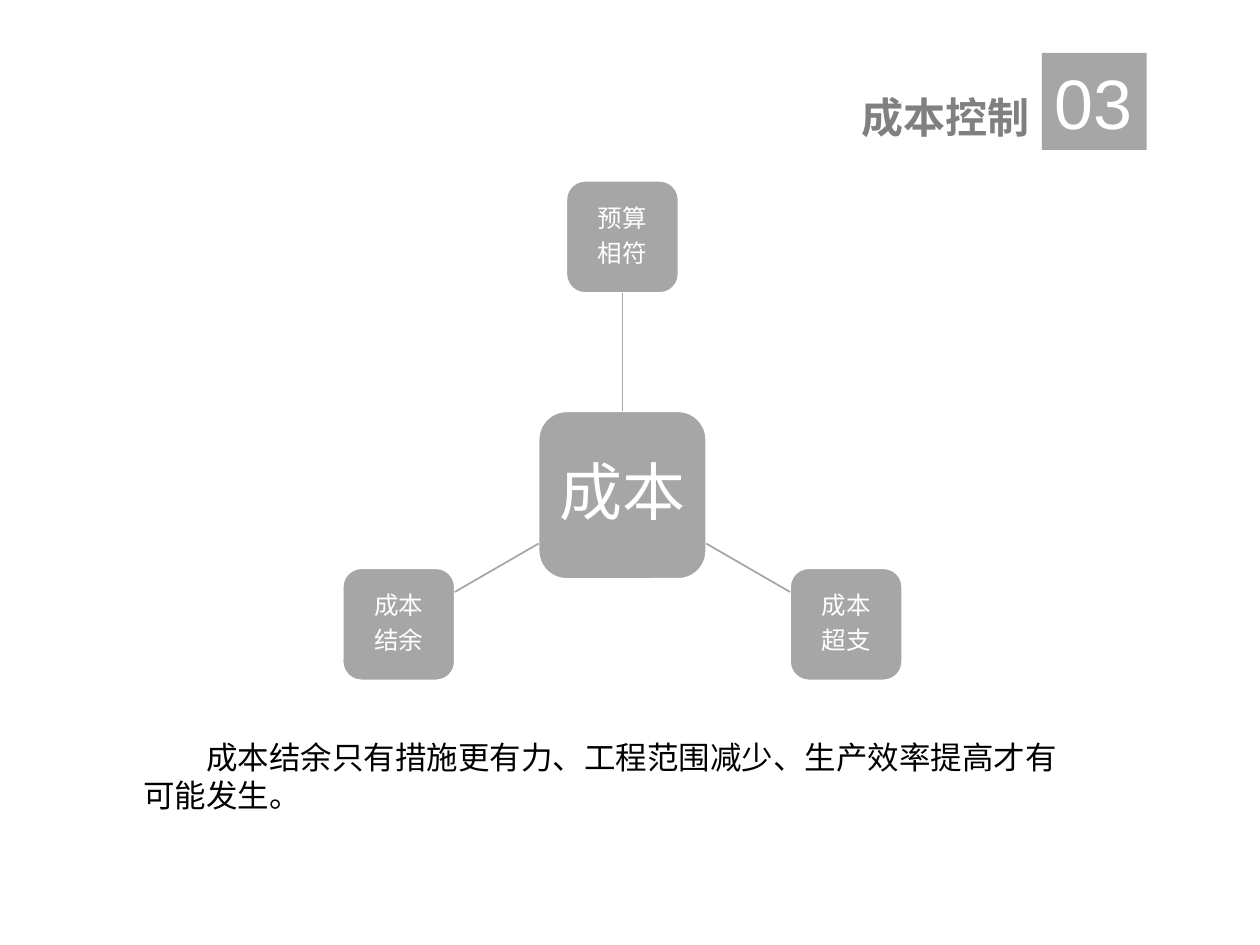
from math import cos, radians, sin

from lxml.etree import SubElement
from pptx import Presentation
from pptx.dml.color import RGBColor
from pptx.enum.shapes import MSO_CONNECTOR, MSO_SHAPE
from pptx.enum.text import MSO_ANCHOR as ANCHOR, MSO_AUTO_SIZE as AUTO, PP_ALIGN as ALIGN
from pptx.oxml.ns import qn
from pptx.util import Inches, Pt

GREY, WHITE = "A6A6A6", "FFFFFF"


def rgb(value):
    return RGBColor.from_string(value)


def write(sp, text, size, color=WHITE, font="Arial", bold=False, align=ALIGN.LEFT,
          anchor=ANCHOR.TOP, inset=None, wrap=True, spacing=None, after=None, indent=0):
    tf = sp.text_frame
    tf.auto_size = AUTO.NONE
    tf.word_wrap = wrap
    tf.vertical_anchor = anchor
    if inset is not None:
        tf.margin_left = tf.margin_right = tf.margin_top = tf.margin_bottom = Inches(inset)
    for i, line in enumerate(text.split("\n")):
        p = tf.paragraphs[0] if i == 0 else tf.add_paragraph()
        p.alignment = align
        if spacing:
            p.line_spacing = spacing
        if after is not None:
            p.space_after = Pt(after)
        if indent:
            p._p.get_or_add_pPr().set("indent", str(Inches(indent)))
        r = p.add_run()
        r.text = line
        r.font.size = Pt(size)
        r.font.bold = bold
        r.font.color.rgb = rgb(color)
        r.font.name = font
        SubElement(r._r.get_or_add_rPr(), qn("a:ea")).set("typeface", font)


prs = Presentation()
prs.slide_width, prs.slide_height = Inches(10), Inches(7.5)
s = prs.slides.add_slide(prs.slide_layouts[5])

# Title
title = s.shapes.title
title.left, title.top = Inches(4.32), Inches(0.68)
title.width, title.height = Inches(3.95), Inches(0.5)
write(title, "成本控制", 24, color="808080", font="Noto Sans CJK SC", bold=True, align=ALIGN.RIGHT)

# Section number
number = s.shapes.add_shape(MSO_SHAPE.RECTANGLE, Inches(8.27), Inches(0.42),
                            Inches(0.83), Inches(0.77))
number.shadow.inherit = False
number.fill.solid()
number.fill.fore_color.rgb = rgb(GREY)
number.line.fill.background()
write(number, "03", 40, wrap=False)

# Radial diagram: a hub and three outcomes, 120 degrees apart
CX, CY, RADIUS = 4.94, 3.93, 2.05
HUB, NODE = 1.33, 0.89
boxes = [
    ("成本", CX, CY, HUB, 36, 0.1, None),
    ("预算\n相符", CX, CY - RADIUS, NODE, 14, 0.08, -90),
    ("成本\n超支", CX + RADIUS * cos(radians(30)), CY + RADIUS / 2, NODE, 14, 0.08, 30),
    ("成本\n结余", CX - RADIUS * cos(radians(30)), CY + RADIUS / 2, NODE, 14, 0.08, 150),
]
hub = None
for text, x, y, side, size, inset, angle in boxes:
    sp = s.shapes.add_shape(MSO_SHAPE.ROUNDED_RECTANGLE, Inches(x - side / 2),
                            Inches(y - side / 2), Inches(side), Inches(side))
    sp.shadow.inherit = False
    sp.fill.solid()
    sp.fill.fore_color.rgb = rgb(GREY)
    sp.line.color.rgb = rgb(WHITE)
    sp.line.width = Pt(1)
    write(sp, text, size, align=ALIGN.CENTER, anchor=ANCHOR.MIDDLE, inset=inset,
          spacing=0.9, after=size * 0.35)
    if hub is None:
        hub = sp
        continue

    # Spoke from the hub's edge to the outcome's edge
    dx, dy = cos(radians(angle)), sin(radians(angle))
    reach = max(abs(dx), abs(dy))
    start, end = HUB / 2 / reach, RADIUS - NODE / 2 / reach
    spoke = s.shapes.add_connector(MSO_CONNECTOR.STRAIGHT,
                                   Inches(CX + start * dx), Inches(CY + start * dy),
                                   Inches(CX + end * dx), Inches(CY + end * dy))
    spoke.line.color.rgb = rgb(GREY)
    spoke.line.width = Pt(1)
    SubElement(spoke._element.spPr, qn("a:effectLst"))
    if angle == -90:
        spoke.begin_connect(hub, 0)
        spoke.end_connect(sp, 2)

# Explanation
note = s.shapes.add_textbox(Inches(1.04), Inches(5.81), Inches(7.62), Inches(0.71))
write(note, "成本结余只有措施更有力、工程范围减少、生产效率提高才有可能发生。", 18,
      color="000000", indent=0.5)

prs.save("out.pptx")
